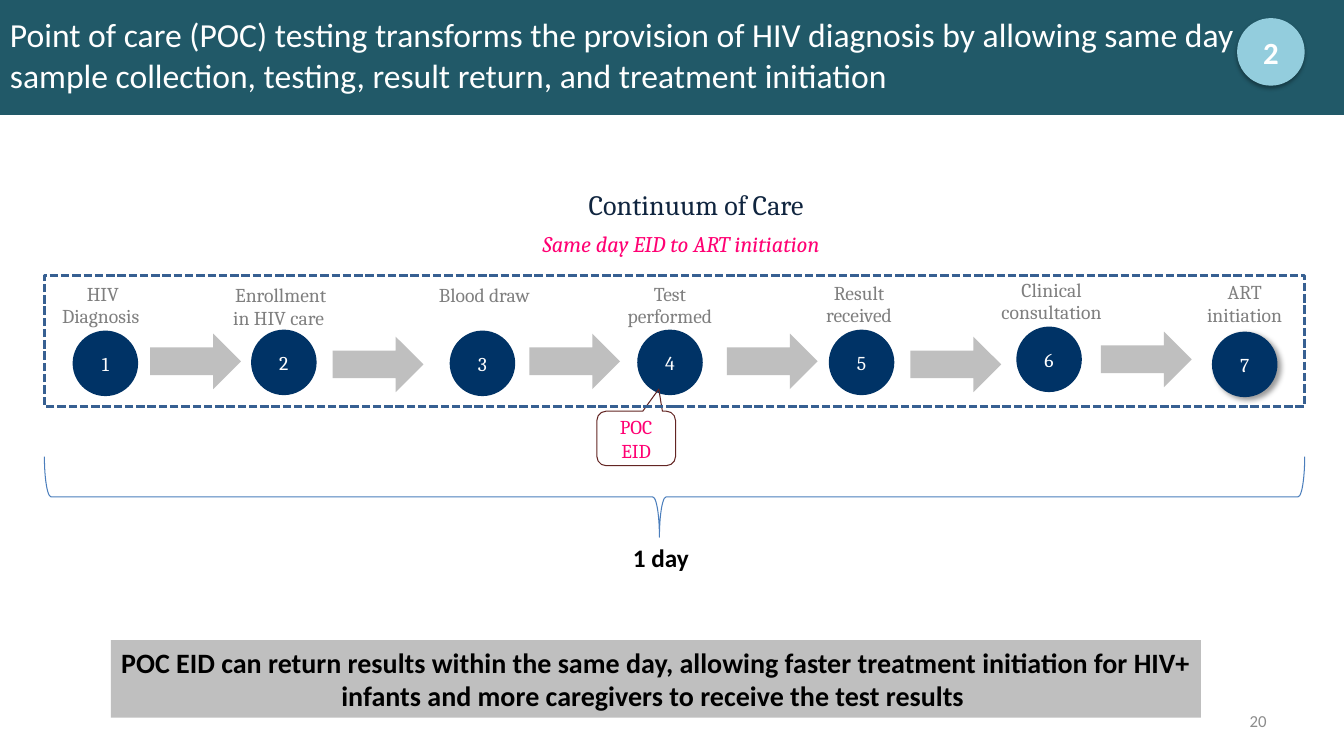
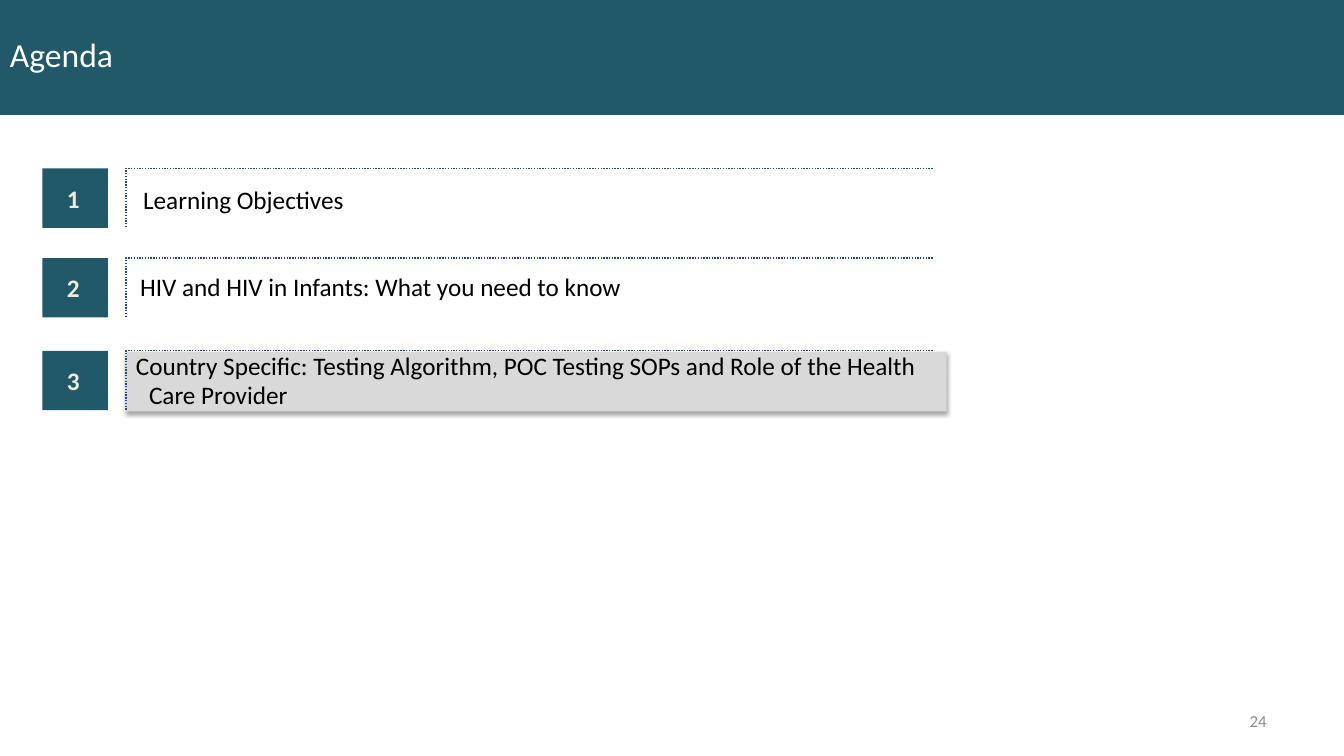
from dataclasses import dataclass

from lxml import etree
from pptx import Presentation, util as u
from pptx.dml.color import RGBColor
from pptx.enum import dml, shapes, text
from pptx.oxml.ns import qn

PX = 9144  # EMU per px, 100 px to the inch
SHAPE = shapes.MSO_SHAPE
ALIGN = text.PP_ALIGN
MIDDLE, TOP = text.MSO_ANCHOR.MIDDLE, text.MSO_ANCHOR.TOP
DASH = dml.MSO_LINE


@dataclass(frozen=True)
class Theme:
    teal: str = "215968"
    sky: str = "93CDDD"
    navy: str = "003366"
    ink: str = "10253F"
    frame: str = "376092"
    brace: str = "4B7EBC"
    rule: str = "1F497D"
    maroon: str = "632523"
    pink: str = "FF0073"
    white: str = "FFFFFF"
    cream: str = "EEECE1"
    black: str = "000000"
    label: str = "7F7F7F"
    number: str = "8C8C8C"
    silver: str = "BFBFBF"
    highlight: str = "D9D9D9"
    sans: str = "Calibri"
    serif: str = "Cambria"
    title: int = 24
    badge: int = 22
    heading: int = 20
    body: int = 18
    subheading: int = 16
    step: int = 14
    footer: int = 12


T = Theme()
INSETS = (10, 5, 10, 5)
SOFT_SHADOW = (35, 3.1, 1.8, 90)  # opacity %, blur pt, distance pt, angle
STEP_SHADOW = (40, 4, 3, 45)


def rgb(value):
    return RGBColor.from_string(value)


def apply(target, formats):
    for name, value in formats.items():
        setattr(target, name, value)


def write(frame, content, size, color, face=T.sans, align=ALIGN.CENTER,
          anchor=MIDDLE, insets=INSETS, spacing=None, hanging=0, **font):
    left, top, right, bottom = (px * PX for px in insets)
    apply(frame, dict(word_wrap=True, vertical_anchor=anchor, margin_left=left,
                      margin_top=top, margin_right=right, margin_bottom=bottom))
    paragraph = frame.paragraphs[0]
    apply(paragraph, dict(alignment=align, line_spacing=spacing))
    if hanging:
        properties = paragraph._p.get_or_add_pPr()
        properties.set("marL", str(hanging * PX))
        properties.set("indent", str(-hanging * PX))
    run = paragraph.add_run()
    run.text = content
    apply(run.font, dict(name=face, size=u.Pt(size), **font))
    run.font.color.rgb = rgb(color)


def add_text(slide, box, content, size, color, **formats):
    area = slide.shapes.add_textbox(*(px * PX for px in box))
    write(area.text_frame, content, size, color, **formats)


def paint(shape, fill=None, line=None, width=0.75, dash=None):
    shape.shadow.inherit = False
    if fill:
        shape.fill.solid()
        shape.fill.fore_color.rgb = rgb(fill)
    else:
        shape.fill.background()
    if line:
        shape.line.color.rgb = rgb(line)
        apply(shape.line, dict(width=u.Pt(width), dash_style=dash))
    else:
        shape.line.fill.background()


def add_shape(slide, kind, box, adjust=(), **look):
    shape = slide.shapes.add_shape(kind, *(px * PX for px in box))
    for index, value in enumerate(adjust):
        shape.adjustments[index] = value
    paint(shape, **look)
    return shape


def cast_shadow(shape, opacity, blur, distance, angle):
    effects = shape._element.spPr.find(qn("a:effectLst"))
    shadow = etree.SubElement(
        effects, qn("a:outerShdw"), blurRad=str(u.Pt(blur)),
        dist=str(u.Pt(distance)), dir=str(angle * 60000), rotWithShape="0")
    color = etree.SubElement(shadow, qn("a:srgbClr"), val=T.black)
    etree.SubElement(color, qn("a:alpha"), val=str(opacity * 1000))


def add_disc(slide, left, top, size, fill, caption, point, shadow=None, **font):
    disc = add_shape(slide, SHAPE.OVAL, (left, top, size, size), fill=fill)
    if shadow:
        cast_shadow(disc, *shadow)
    write(disc.text_frame, caption, point, T.white, insets=(0, 0, 0, 0), **font)


def start_slide(deck, title, number):
    """Blank slide with the title band and page number."""
    slide = deck.slides.add_slide(deck.slide_layouts[6])
    add_shape(slide, SHAPE.RECTANGLE, (0, 0, 1333, 114), fill=T.teal)
    add_text(slide, (0, 0, 1329, 108), title, T.title, T.white, align=ALIGN.LEFT)
    add_text(slide, (955, 695, 311, 40), number, T.footer, T.number,
             align=ALIGN.RIGHT)
    return slide


def add_step(slide, number, step):
    caption, label_left, label_top, label_width, disc_left, disc_top, shadow = step
    add_disc(slide, disc_left, disc_top, 65, T.navy, str(number), T.step,
             shadow, face=T.serif)
    add_text(slide, (label_left, label_top, label_width, 55), caption, T.step,
             T.label, face=T.serif, anchor=TOP, spacing=u.Pt(16))


def build_continuum(deck):
    slide = start_slide(
        deck, "Point of care (POC) testing transforms the provision of HIV "
        "diagnosis by allowing same day sample collection, testing, result "
        "return, and treatment initiation", "20")
    add_disc(slide, 1227, 18, 67, T.sky, "2", T.badge, SOFT_SHADOW, bold=True)

    # Headings
    add_text(slide, (244, 192, 893, 33), "Continuum of Care", T.heading, T.ink,
             face=T.serif, anchor=TOP, spacing=u.Pt(16))
    add_text(slide, (433, 223, 485, 37), "Same day EID to ART initiation",
             T.subheading, T.pink, face=T.serif, anchor=TOP, italic=True)

    # Steps: caption, label left, top and width, disc left and top, shadow
    steps = [
        ("HIV Diagnosis ", 36, 276, 132, 72, 328, None),
        ("Enrollment in HIV care ", 217, 277, 123, 249, 327, None),
        ("Blood draw", 419, 277, 123, 446, 328, None),
        ("Test performed", 603, 276, 123, 632, 327, None),
        ("Result received", 786, 275, 132, 822, 327, None),
        ("Clinical consultation", 971, 272, 144, 1008, 324, None),
        ("ART initiation", 1173, 274, 123, 1202, 329, STEP_SHADOW),
    ]
    for number, step in enumerate(steps, 1):
        add_step(slide, number, step)
    for left, top in [(149, 331), (330, 334), (525, 331),
                      (721, 331), (903, 334), (1092, 329)]:
        add_shape(slide, SHAPE.RIGHT_ARROW, (left, top, 90, 55), fill=T.silver)

    # Test callout and frame around the steps
    callout = add_shape(slide, SHAPE.ROUNDED_RECTANGULAR_CALLOUT,
                        (592, 408, 78, 54), (0.287, -0.907, 0.167),
                        line=T.maroon)
    write(callout.text_frame, "POC EID", T.step, T.pink, face=T.serif)
    add_shape(slide, SHAPE.RECTANGLE, (44, 273, 1250, 130), line=T.frame,
              width=2, dash=DASH.SQUARE_DOT)

    # Time span
    span = add_shape(slide, SHAPE.RIGHT_BRACE, (629, -132, 80, 1250),
                     (0.083, 0.512), line=T.brace)
    span.rotation = 90
    add_text(slide, (588, 533, 135, 40), "1 day", T.body, T.black,
             anchor=TOP, bold=True)

    # Key message
    message = add_shape(slide, SHAPE.RECTANGLE, (110, 635, 1081, 77),
                        fill=T.silver)
    write(message.text_frame, "POC EID can return results within the same day, "
          "allowing faster treatment initiation for HIV+ infants and more "
          "caregivers to receive the test results ", T.heading, T.black,
          anchor=TOP, bold=True)


def add_agenda_marker(slide, number, top):
    tile = add_shape(slide, SHAPE.RECTANGLE, (42, top, 65, 59), fill=T.teal)
    write(tile.text_frame, str(number), T.body, T.cream, insets=(6, 5, 10, 5),
          bold=True)
    corner = slide.shapes.build_freeform(925, top, PX)
    corner.add_line_segments([(125, top), (125, top + 59)], close=False)
    paint(corner.convert_to_shape(), line=T.rule, width=1, dash=DASH.ROUND_DOT)


def build_agenda(deck):
    slide = start_slide(deck, "Agenda", "24")
    entry = dict(size=T.body, color=T.black, align=ALIGN.LEFT, spacing=0.95,
                 hanging=13)

    # Current topic
    current = add_shape(slide, SHAPE.RECTANGLE, (125, 349, 814, 59),
                        fill=T.highlight)
    cast_shadow(current, *SOFT_SHADOW)
    write(current.text_frame, "Country Specific: Testing Algorithm, POC Testing "
          "SOPs and Role of the Health Care Provider", **entry)

    # Numbered rows
    for number, top in enumerate((167, 256, 348), 1):
        add_agenda_marker(slide, number, top)
    for left, top, topic in [
            (142, 185, "Learning Objectives"),
            (139, 271, "HIV and HIV in Infants: What you need to know")]:
        add_text(slide, (left, top, 744, 29), topic, anchor=TOP,
                 insets=(0, 0, 0, 0), **entry)


def main():
    deck = Presentation()
    apply(deck, dict(slide_width=1333 * PX, slide_height=750 * PX))
    build_continuum(deck)
    build_agenda(deck)
    deck.save("out.pptx")


if __name__ == "__main__":
    main()
